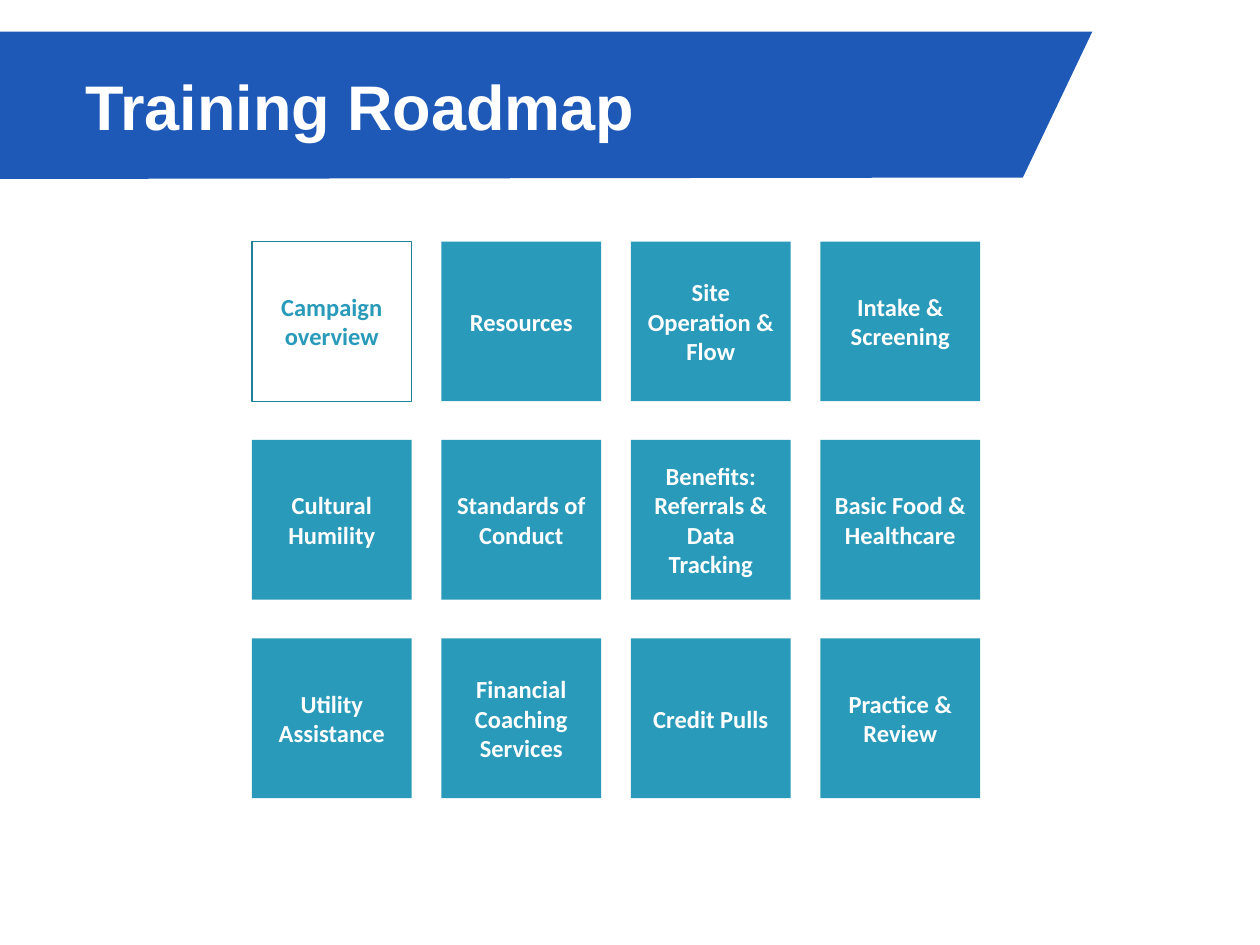
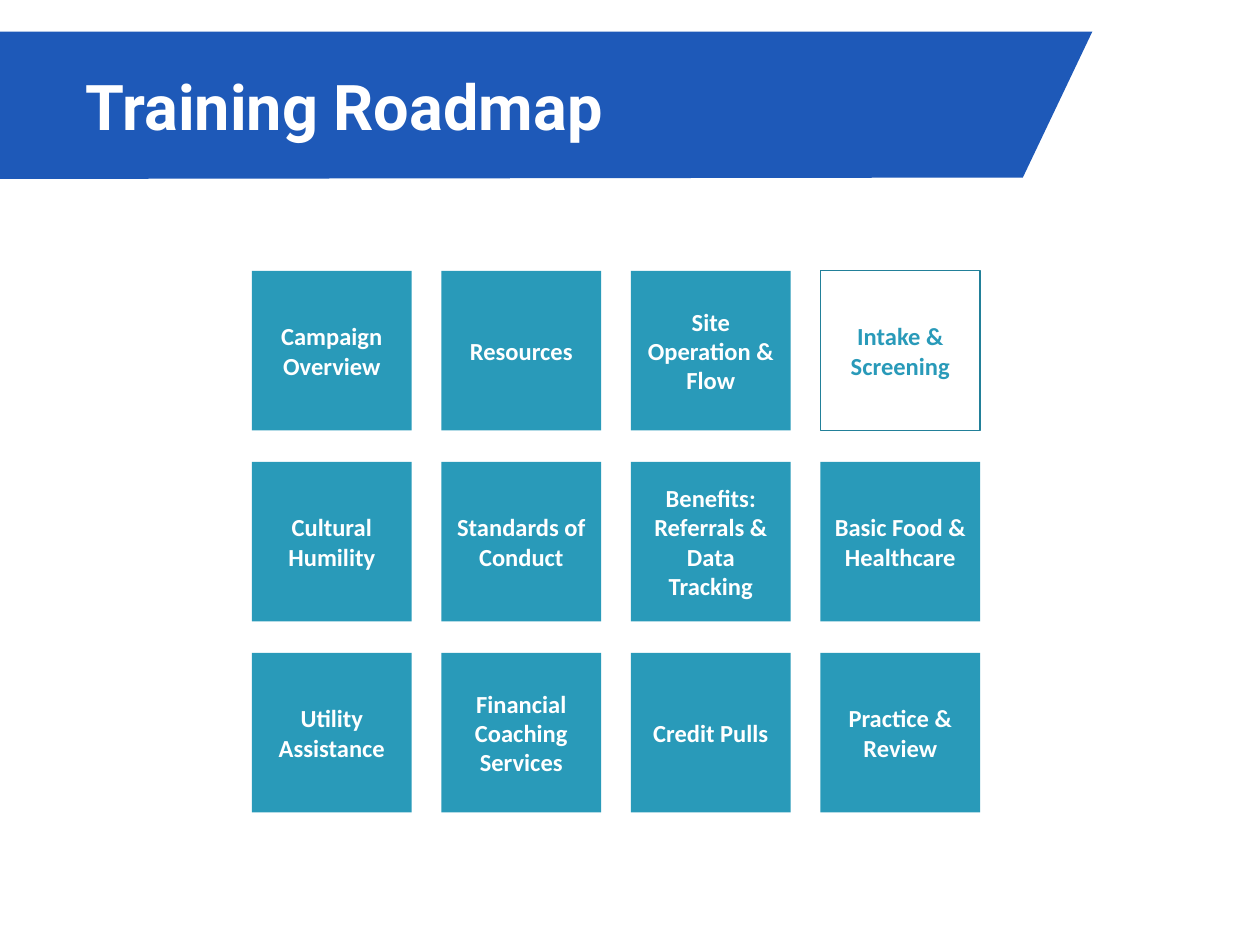
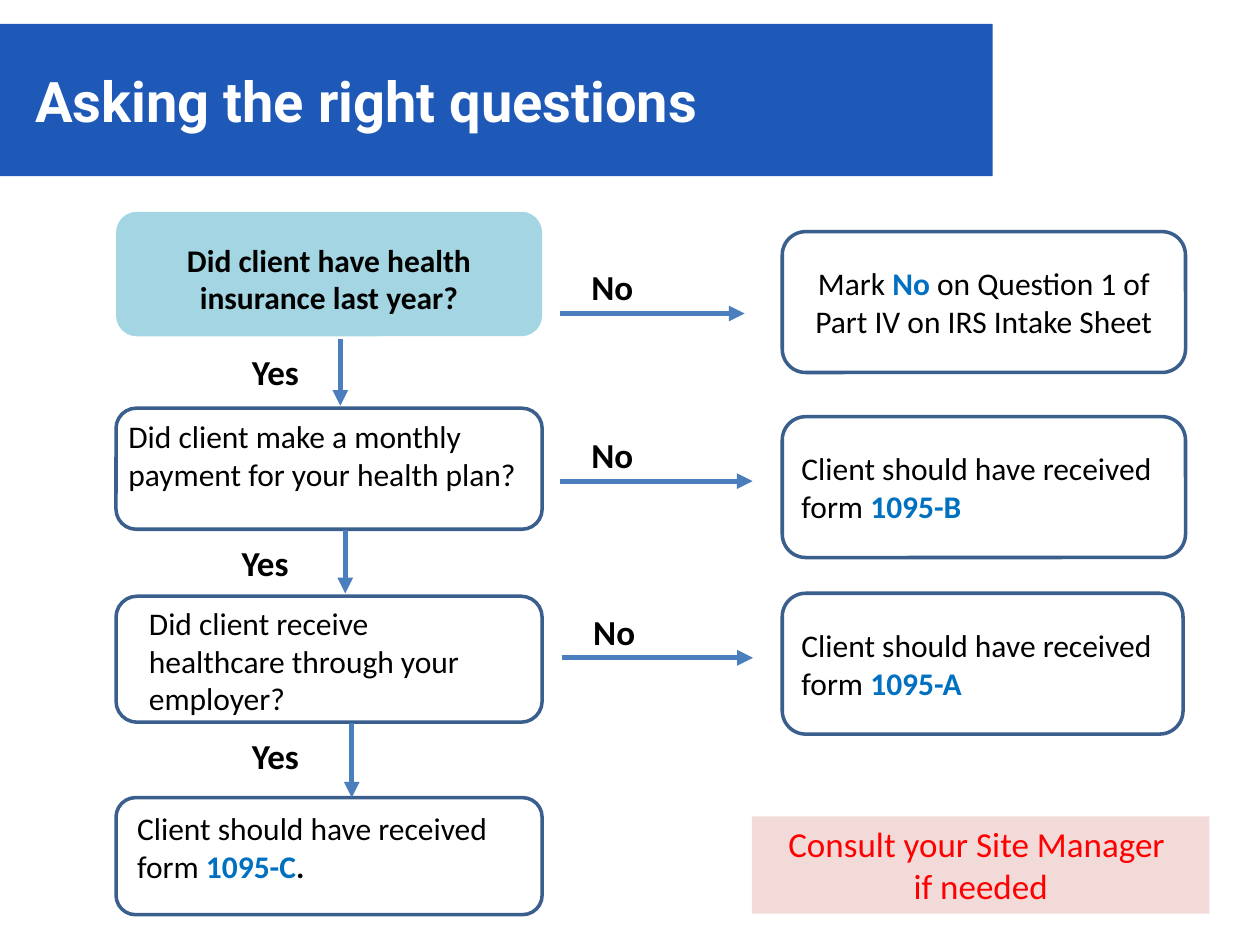
from dataclasses import dataclass
from typing import NamedTuple

from lxml.etree import SubElement as Sub
from pptx import Presentation
from pptx.dml.color import RGBColor as Rgb
from pptx.enum.shapes import MSO_CONNECTOR as Link, MSO_SHAPE as Kind
from pptx.enum.text import MSO_ANCHOR as Anchor, PP_ALIGN as Align
from pptx.oxml.ns import qn
from pptx.util import Cm, Pt


class Box(NamedTuple):
    """Left, top, width and height in centimetres."""
    x: float
    y: float
    w: float
    h: float


@dataclass(frozen=True)
class Theme:
    """Colours, fonts and type sizes of the deck."""
    band: Rgb = Rgb(0x1E, 0x59, 0xB8)
    tile: Rgb = Rgb(0x29, 0x9A, 0xB9)
    edge: Rgb = Rgb(0x22, 0x80, 0x99)
    start: Rgb = Rgb(0x4B, 0xAC, 0xC6)
    frame: Rgb = Rgb(0x3A, 0x5F, 0x8C)
    arrow: Rgb = Rgb(0x4B, 0x7E, 0xBC)
    key: Rgb = Rgb(0x00, 0x70, 0xC0)
    note: Rgb = Rgb(0xF2, 0xDA, 0xD9)
    alert: Rgb = Rgb(0xFF, 0x00, 0x00)
    white: Rgb = Rgb(0xFF, 0xFF, 0xFF)
    black: Rgb = Rgb(0x00, 0x00, 0x00)
    font: str = "Calibri"
    head: str = "Roboto"
    title: int = 36
    ask: int = 32
    label: int = 20
    body: int = 18
    small: int = 14


T = Theme()
PAD = (0.25, 0.13, 0.25, 0.13)
GRID = (
    ("Campaign Overview", "Resources", "Site Operation & Flow", "Intake & Screening"),
    ("Cultural Humility", "Standards of Conduct", "Benefits: Referrals & Data Tracking",
     "Basic Food & Healthcare"),
    ("Utility Assistance", "Financial Coaching Services", "Credit Pulls", "Practice & Review"),
)
FORM = "Client should have received form "


def style(run, size, color, bold=False, font=T.font):
    """Set the font of one run."""
    run.font.size, run.font.bold, run.font.name = Pt(size), bold, font
    run.font.color.rgb = color


def paint(shape, fill=None, line=None, width=2):
    """Set fill and outline, and drop the shadow."""
    shape.shadow.inherit = False
    if fill is None:
        shape.fill.background()
    else:
        shape.fill.solid()
        shape.fill.fore_color.rgb = fill
    if line is None:
        shape.line.fill.background()
    else:
        shape.line.color.rgb = line
        shape.line.width = Pt(width)


def setup(shape, align=Align.LEFT, anchor=Anchor.MIDDLE, pad=PAD):
    """Set wrap, anchor, margins and alignment; return the first paragraph."""
    frame = shape.text_frame
    frame.word_wrap, frame.vertical_anchor = True, anchor
    (frame.margin_left, frame.margin_top,
     frame.margin_right, frame.margin_bottom) = map(Cm, pad)
    para = frame.paragraphs[0]
    para.alignment = align
    return para


def write(shape, text, size, color, bold=False, font=T.font, **opts):
    """Put one text in a single style into a shape."""
    para = setup(shape, **opts)
    para.text = text
    for run in para.runs:
        style(run, size, color, bold, font)


def block(slide, kind, box):
    """Add a preset shape that fills the box."""
    return slide.shapes.add_shape(kind, *map(Cm, box))


def slant(slide, box, text, font):
    """Draw the title band with slanted ends."""
    x, y, w, h = box
    spots = [(x, y + h), (x + 0.82, y), (x + w, y), (x + w - 1.4, y + h - 0.03)]
    first, *rest = [(Cm(a), Cm(b)) for a, b in spots]
    path = slide.shapes.build_freeform(*first)
    path.add_line_segments(rest, close=True)
    band = path.convert_to_shape()
    paint(band, T.band)
    write(band, text, T.title, T.white, True, font, pad=(2.79, 0.13, 0.25, 0.13))


def tiles(slide, box, pitch, names, pick):
    """Fill the box with a grid of square tiles and outline the picked one."""
    for row, line in enumerate(names):
        for col, name in enumerate(line):
            spot = Box(box.x + col * 3.82, box.y + row * pitch, 3.22, 3.22)
            tile = block(slide, Kind.RECTANGLE, spot)
            live = (row, col) == pick
            paint(tile, None if live else T.tile, T.edge if live else None, 0.75)
            write(tile, name, T.small, T.tile if live else T.white, True, align=Align.CENTER)


def roadmap(deck, font, top, pitch, names, pick):
    """Build a roadmap slide."""
    slide = deck.slides.add_slide(deck.slide_layouts[6])
    slant(slide, Box(-1.07, 0.64, 23.09, 2.97), "Training Roadmap", font)
    tiles(slide, Box(5.08, top, 14.68, 2 * pitch + 3.22), pitch, names, pick)


def card(slide, box, parts, fill=T.white, line=T.frame, **opts):
    """Draw a rounded card; each part is a text, with a colour if it is bold."""
    shape = block(slide, Kind.ROUNDED_RECTANGLE, box)
    paint(shape, fill, line)
    para = setup(shape, **opts)
    for text, color in parts:
        run = para.add_run()
        run.text = text
        style(run, T.body, color or T.black, color is not None)
    return shape


def arrow(slide, box, text, shift):
    """Draw an arrow across the box, with its label shifted from the start."""
    x, y, w, h = box
    line = slide.shapes.add_connector(Link.STRAIGHT, *map(Cm, (x, y, x + w, y + h)))
    line.line.color.rgb, line.line.width = T.arrow, Pt(3)
    Sub(line.line._get_or_add_ln(), qn("a:tailEnd"), type="triangle")
    Sub(line._element.spPr, qn("a:effectLst"))
    label = slide.shapes.add_textbox(Cm(x + shift[0]), Cm(y + shift[1]), Cm(2.2), Cm(1.12))
    write(label, text, T.label, T.black, True, anchor=Anchor.TOP)


def asks(slide, box):
    """Stack the questions at the left, with the arrows between them."""
    x, y, w, _ = box
    first = card(slide, Box(x, y, w, 2.51), [("Did client have health insurance last year?", T.black)],
                 T.start, None, align=Align.CENTER, anchor=Anchor.TOP, pad=(0.25, 0.46, 0.25, 0))
    tint = first.fill._xPr.find(qn("a:solidFill"))[0]
    Sub(tint, qn("a:alpha"), val="50000")
    rows = (
        (3.96, 2.44, [("Did client make a monthly payment for your health plan?", None)],
         (0.13, 0.06, 0.13, 0)),
        (7.75, 2.54, [("Did client receive healthcare through your employer?", None)],
         (0.54, 0.03, 0.56, 0)),
        (11.81, 2.36, [(FORM, None), ("1095-C", T.key), (".", T.black)],
         (0.31, 0.11, 0.25, 0)),
    )
    for top, high, parts, pad in rows:
        card(slide, Box(x, y + top, w, high), parts, anchor=Anchor.TOP, pad=pad)
    for left, top, high, shift in ((4.52, 2.56, 1.35, -2.03), (4.62, 6.42, 1.27, -2.34),
                                   (4.75, 10.31, 1.5, -2.26)):
        arrow(slide, Box(x + left, y + top, 0, high), "Yes", (shift, 0.1))


def ends(slide, box):
    """Stack the answers at the right, each with the arrow that leads to it."""
    x, y, w, _ = box
    rows = (
        (0, w, [("Mark ", None), ("No", T.key),
                (" on Question 1 of Part IV on IRS Intake Sheet", None)], Align.CENTER),
        (3.73, w, [(FORM, None), ("1095-B", T.key)], Align.LEFT),
        (7.29, w - 0.05, [(FORM, None), ("1095-A", T.key)], Align.LEFT),
    )
    for top, wide, parts, align in rows:
        card(slide, Box(x, y + top, wide, 2.84), parts, align=align)
    for left, top, wide in ((-4.49, 1.65, 3.73), (-4.49, 5.03, 3.89), (-4.45, 8.59, 3.86)):
        arrow(slide, Box(x + left, y + top, wide, 0), "No", (0.39, -1.09))


def chart(deck):
    """Build the slide with the question flow."""
    slide = deck.slides.add_slide(deck.slide_layouts[6])
    band = block(slide, Kind.RECTANGLE, Box(-0.64, 0.48, 20.65, 3.07))
    paint(band, T.band)
    write(band, "Asking the right questions", T.ask, T.white, True, T.head,
          pad=(1.35, 0.13, 0.25, 0.13))
    asks(slide, Box(2.34, 4.27, 8.59, 14.17))
    ends(slide, Box(15.77, 4.67, 8.13, 10.13))
    note = block(slide, Kind.RECTANGLE, Box(15.16, 16.46, 9.22, 1.96))
    paint(note, T.note)
    write(note, "Consult your Site Manager \vif needed", T.label, T.alert,
          align=Align.CENTER, anchor=Anchor.TOP)


def main():
    """Build and save the deck."""
    deck = Presentation()
    deck.slide_width, deck.slide_height = Cm(25.4), Cm(19.05)
    first = (("Campaign overview", *GRID[0][1:]), *GRID[1:])
    roadmap(deck, "Arial", 4.87, 4, first, (0, 0))
    roadmap(deck, T.head, 5.46, 3.85, GRID, (0, 3))
    chart(deck)
    deck.save("out.pptx")


if __name__ == "__main__":
    main()
